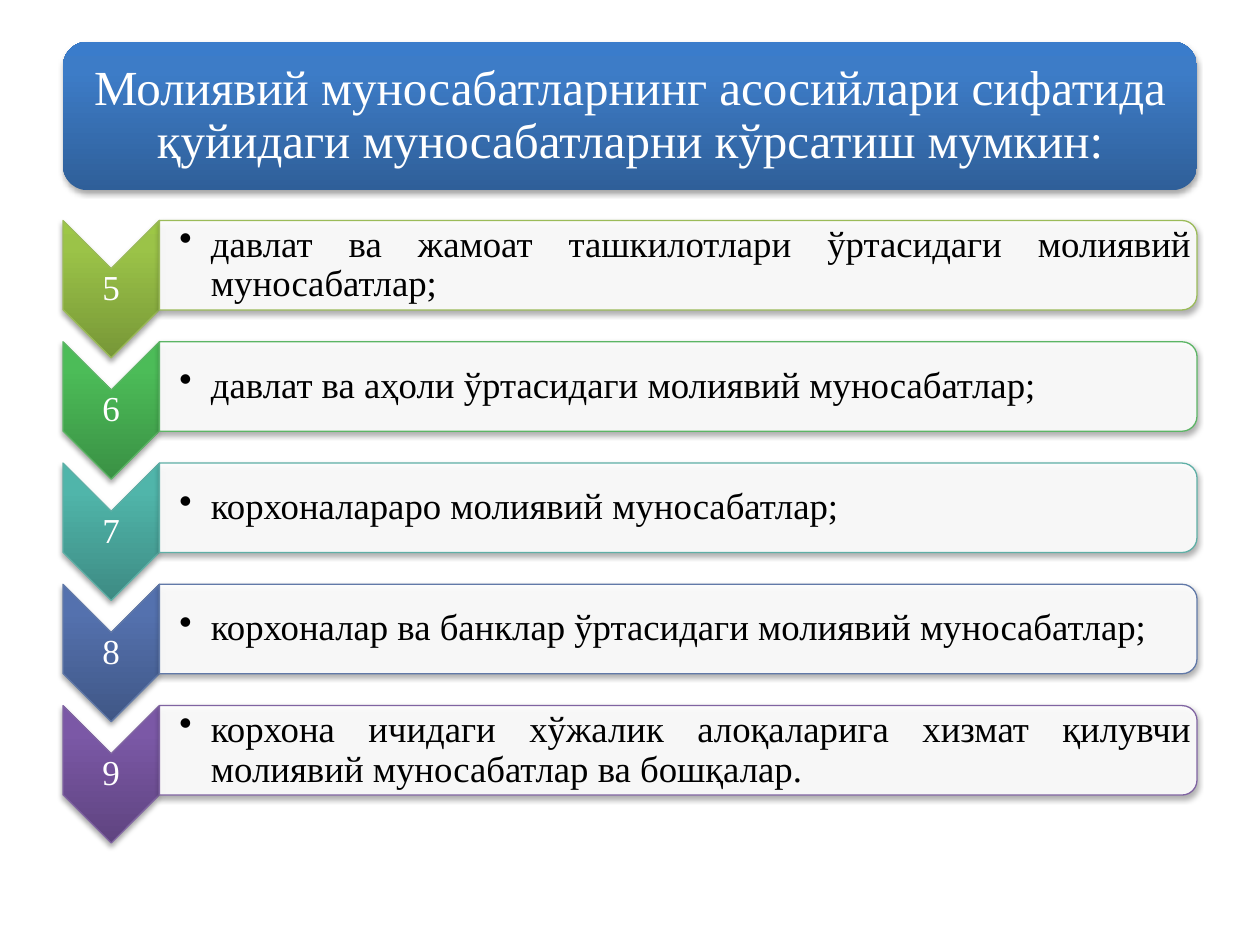
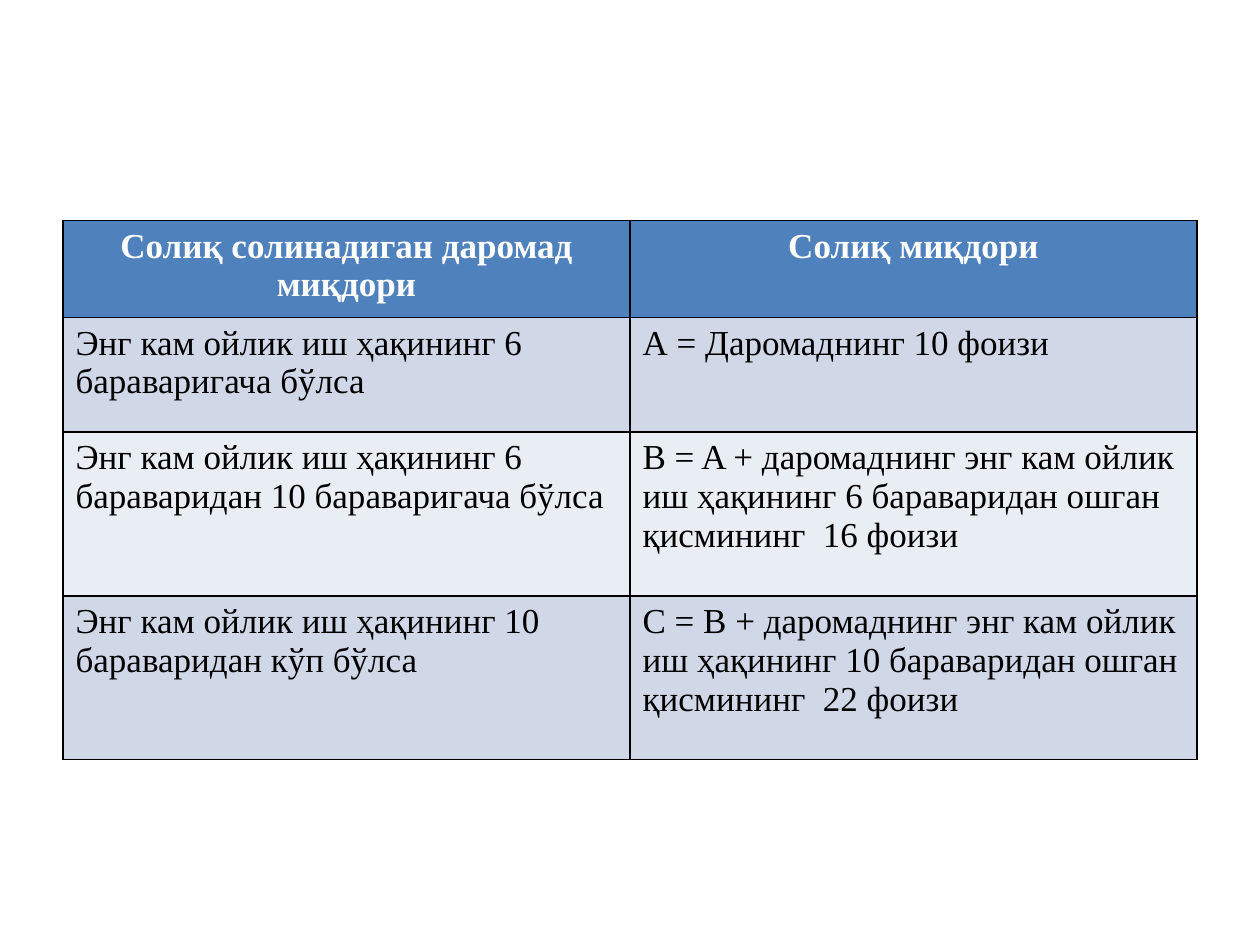
from dataclasses import dataclass
from typing import NamedTuple

from pptx import Presentation
from pptx import oxml
from pptx import util as u
from pptx.dml import color
from pptx.enum import shapes, text
from pptx.oxml import ns

WIDTH, HEIGHT = u.Inches(10), u.Inches(7.5)
COLUMN, ROW = WIDTH / 20, HEIGHT / 30
FONT = "Times New Roman"
MARGIN, CONTENT_WIDTH, CONTENT_TOP = 1, 18, 7
STEP_PITCH = 3.85
CHEVRON_WIDTH, CHEVRON_HEIGHT = 1.53, 4.36
PANEL_HEIGHT = 2.84

COLOURS = {
    "white": "FFFFFF", "black": "000000",
    "header": "4F81BD", "odd_row": "D0D8E8", "even_row": "E9EDF4",
    "title_dark": "2F5F99", "title_mid": "3D7CC7", "title_light": "3A7CCB",
    "lime_dark": "779737", "lime_mid": "9BC348", "lime_light": "9DC746", "lime_line": "9BBB59",
    "green_dark": "3A9144", "green_mid": "4CBC58", "green_light": "4ABF57", "green_line": "5CB565",
    "teal_dark": "3D8B83", "teal_mid": "50B5AA", "teal_light": "4EB8AC", "teal_line": "5EAFA6",
    "blue_dark": "405786", "blue_mid": "5471AE", "blue_light": "5271B0", "blue_line": "6179A8",
    "violet_dark": "5F4480", "violet_mid": "7B58A6", "violet_light": "7C57A8",
    "violet_line": "8064A2",
}


class Frame(NamedTuple):
    left: float
    top: float
    width: float
    height: float

    def lengths(self) -> tuple[int, int, int, int]:
        return (round(self.left * COLUMN), round(self.top * ROW),
                round(self.width * COLUMN), round(self.height * ROW))


@dataclass(frozen=True)
class Step:
    number: str
    wording: str
    hue: str


class TaxRow(NamedTuple):
    income: str
    tax: str
    height: float
    fill: str


TITLE = "Молиявий муносабатларнинг асосийлари сифатида қуйидаги муносабатларни кўрсатиш мумкин:"
STEPS = [
    Step("5", "давлат ва жамоат ташкилотлари ўртасидаги молиявий муносабатлар;", "lime"),
    Step("6", "давлат ва аҳоли ўртасидаги молиявий муносабатлар;", "green"),
    Step("7", "корхоналараро молиявий муносабатлар;", "teal"),
    Step("8", "корхоналар ва банклар ўртасидаги молиявий муносабатлар;", "blue"),
    Step("9", "корхона ичидаги хўжалик алоқаларига хизмат қилувчи молиявий "
              "муносабатлар ва бошқалар.", "violet"),
]
TAX_ROWS = [
    TaxRow("Солиқ солинадиган даромад миқдори", "Солиқ миқдори", 3.08, "header"),
    TaxRow("Энг кам ойлик иш ҳақининг 6 бараваригача бўлса",
           "А = Даромаднинг 10 фоизи", 3.64, "odd_row"),
    TaxRow("Энг кам ойлик иш ҳақининг 6 бараваридан 10 бараваригача бўлса",
           "B = A + даромаднинг энг кам ойлик иш ҳақининг 6 бараваридан ошган "
           "қисмининг  16 фоизи", 5.2, "even_row"),
    TaxRow("Энг кам ойлик иш ҳақининг 10 бараваридан кўп бўлса",
           "C = B + даромаднинг энг кам ойлик иш ҳақининг 10 бараваридан ошган "
           "қисмининг  22 фоизи", 5.2, "odd_row"),
]


def rgb(name: str) -> color.RGBColor:
    return color.RGBColor.from_string(COLOURS[name])


def xml(markup: str):
    tag, rest = markup.split(" ", 1)
    return oxml.parse_xml(f"{tag} {ns.nsdecls('a')} {rest}")


def write(frame, wording: str, *, size: float, colour: str = "black", bold: bool = False,
          align=text.PP_ALIGN.LEFT, spacing: float = 1.0, bullet: bool = False) -> None:
    para = frame.paragraphs[0]
    para.alignment = align
    para.line_spacing = spacing
    span = para.add_run()
    span.text = wording
    span.font.name = FONT
    span.font.size = u.Pt(size)
    span.font.bold = bold
    span.font.color.rgb = rgb(colour)
    if bullet:
        para.level = 1
        properties = para._p.get_or_add_pPr()
        properties.set("marL", str(u.Inches(0.25)))
        properties.set("indent", str(-u.Inches(0.25)))
        properties.append(xml('<a:buChar char="•"/>'))


def add_text(page, frame: Frame, wording: str, *, inset: float = 0.01,
             left_inset: float | None = None, **style) -> None:
    box = page.shapes.add_textbox(*frame.lengths()).text_frame
    box.word_wrap = True
    box.vertical_anchor = text.MSO_ANCHOR.MIDDLE
    box.margin_top = box.margin_right = box.margin_bottom = u.Inches(inset)
    box.margin_left = u.Inches(inset if left_inset is None else left_inset)
    write(box, wording, spacing=0.9, **style)


def add_block(page, kind, frame: Frame, *, hue: str | None = None,
              outline: str | None = None, turned: bool = False) -> None:
    left, top, width, height = frame.lengths()
    if turned:
        left, top = left + (width - height) // 2, top + (height - width) // 2
        width, height = height, width
    shape = page.shapes.add_shape(kind, left, top, width, height)
    shape.rotation = 90 if turned else 0
    properties = shape._element.spPr
    if hue:
        stops = "".join(
            f'<a:gs pos="{place}"><a:srgbClr val="{COLOURS[f"{hue}_{shade}"]}"/></a:gs>'
            for shade, place in (("dark", 0), ("mid", 80000), ("light", 100000)))
        properties.find(ns.qn("a:prstGeom")).addnext(xml(
            f'<a:gradFill rotWithShape="0"><a:gsLst>{stops}</a:gsLst>'
            '<a:lin ang="16200000" scaled="0"/></a:gradFill>'))
    else:
        shape.fill.solid()
        shape.fill.fore_color.rgb = rgb("white")
        properties.find(".//" + ns.qn("a:srgbClr")).append(xml('<a:alpha val="90000"/>'))
    if outline:
        shape.line.color.rgb = rgb(outline)
        shape.line.width = u.Pt(0.75)
    else:
        shape.line.fill.background()
    shape.shadow.inherit = False
    properties.find(ns.qn("a:effectLst")).append(xml(
        f'<a:outerShdw blurRad="{u.Pt(3.1)}" dist="{u.Pt(1.8)}" dir="5400000" '
        f'rotWithShape="0"><a:srgbClr val="{COLOURS["black"]}">'
        '<a:alpha val="35000"/></a:srgbClr></a:outerShdw>'))


def add_step(page, step: Step, top: float) -> None:
    outline = f"{step.hue}_line"
    panel_left = MARGIN + CHEVRON_WIDTH
    panel_width = CONTENT_WIDTH - CHEVRON_WIDTH
    add_block(page, shapes.MSO_SHAPE.CHEVRON,
              Frame(MARGIN, top, CHEVRON_WIDTH, CHEVRON_HEIGHT),
              hue=step.hue, outline=outline, turned=True)
    add_text(page, Frame(MARGIN, top + 1.52, CHEVRON_WIDTH, 1.32), step.number,
             size=20, colour="white", align=text.PP_ALIGN.CENTER)
    add_block(page, shapes.MSO_SHAPE.ROUND_2_SAME_RECTANGLE,
              Frame(panel_left, top, panel_width, PANEL_HEIGHT),
              outline=outline, turned=True)
    add_text(page, Frame(panel_left, top + 0.14, panel_width - 0.07, PANEL_HEIGHT - 0.28),
             step.wording, left_inset=0.16, size=21,
             align=text.PP_ALIGN.JUSTIFY, bullet=True)


def add_relations_page(deck) -> None:
    page = deck.slides.add_slide(deck.slide_layouts[6])
    add_block(page, shapes.MSO_SHAPE.ROUNDED_RECTANGLE,
              Frame(MARGIN, 1.32, CONTENT_WIDTH, 4.72), hue="title")
    add_text(page, Frame(MARGIN + 0.12, 1.56, CONTENT_WIDTH - 0.24, 4.24), TITLE,
             inset=0.12, size=28, colour="white", align=text.PP_ALIGN.CENTER)
    for index, step in enumerate(STEPS):
        add_step(page, step, CONTENT_TOP + index * STEP_PITCH)


def fill_cell(cell, wording: str, fill: str, **style) -> None:
    properties = cell._tc.get_or_add_tcPr()
    for side in "LRTB":
        properties.append(xml(
            f'<a:ln{side} w="{u.Pt(1)}"><a:solidFill><a:srgbClr val="{COLOURS["black"]}"/>'
            f'</a:solidFill></a:ln{side}>'))
    cell.fill.solid()
    cell.fill.fore_color.rgb = rgb(fill)
    write(cell.text_frame, wording, size=20, **style)


def add_tax_page(deck) -> None:
    page = deck.slides.add_slide(deck.slide_layouts[6])
    frame = Frame(MARGIN, CONTENT_TOP, CONTENT_WIDTH, sum(row.height for row in TAX_ROWS))
    table = page.shapes.add_table(len(TAX_ROWS), 2, *frame.lengths()).table
    header_style = {"colour": "white", "bold": True, "align": text.PP_ALIGN.CENTER}
    for index, row in enumerate(TAX_ROWS):
        table.rows[index].height = round(row.height * ROW)
        style = header_style if index == 0 else {}
        for column, wording in enumerate((row.income, row.tax)):
            fill_cell(table.cell(index, column), wording, row.fill, **style)


def main() -> None:
    deck = Presentation()
    deck.slide_width, deck.slide_height = WIDTH, HEIGHT
    add_relations_page(deck)
    add_tax_page(deck)
    deck.save("out.pptx")


if __name__ == "__main__":
    main()
